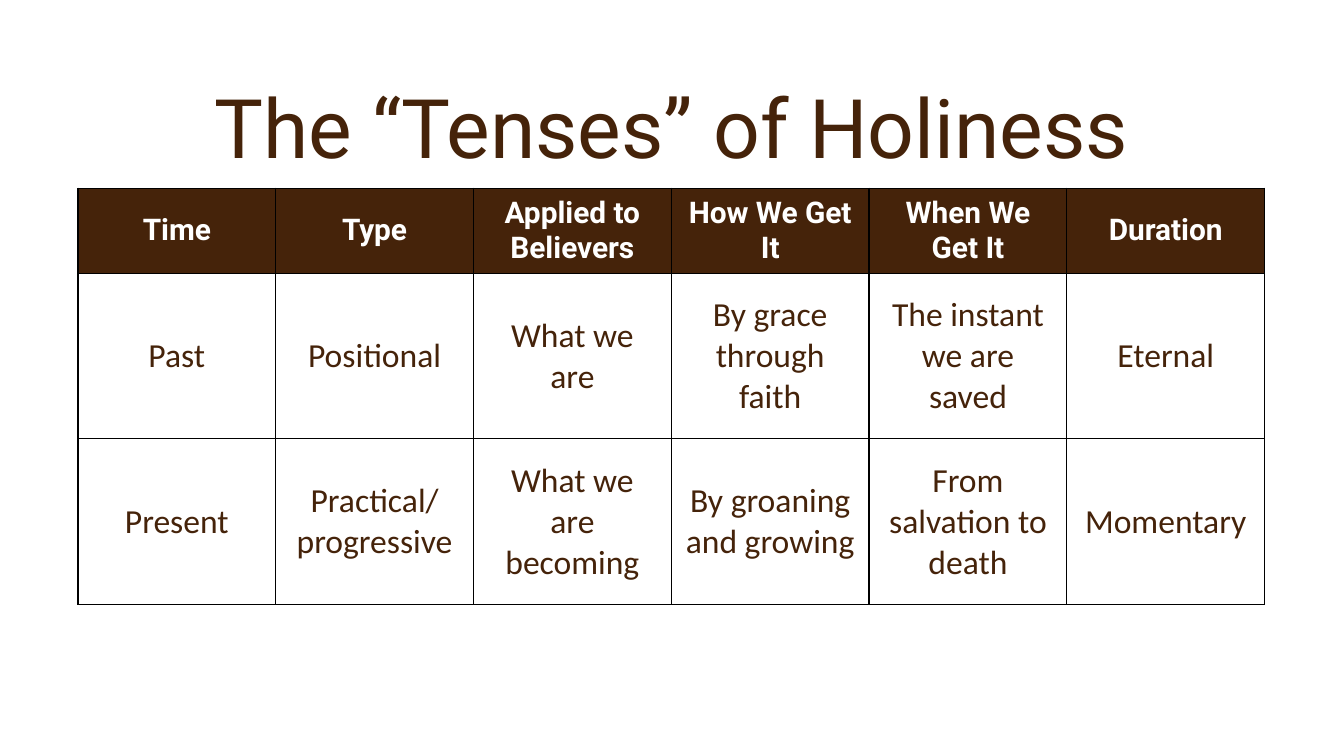
import lxml.etree
import pptx
import pptx.dml.color
import pptx.enum.text
import pptx.oxml.ns
import pptx.util

BROWN = pptx.dml.color.RGBColor(0x45, 0x23, 0x0A)
WHITE = pptx.dml.color.RGBColor(0xFF, 0xFF, 0xFF)
BLACK = pptx.dml.color.RGBColor(0x00, 0x00, 0x00)

HEADS = ["Time", "Type", "Applied to Believers", "How We Get It", "When We Get It", "Duration"]
TENSES = [
    ["Past", "Positional", "What we are", "By grace through faith",
     "The instant we are saved", "Eternal"],
    ["Present", "Practical/progressive", "What we are becoming",
     "By groaning and growing", "From salvation to death", "Momentary"],
]


def write(frame, text, size=18, font="Calibri", color=BROWN, bold=False, space=None):
    para = frame.paragraphs[0]
    para.alignment = pptx.enum.text.PP_ALIGN.CENTER
    para.line_spacing = space
    run = para.add_run()
    run.text = text
    run.font.size = pptx.util.Pt(size)
    run.font.name = font
    run.font.bold = bold
    run.font.color.rgb = color


def edge(cell, width=0.75, color=BLACK):
    props = cell._tc.get_or_add_tcPr()
    for side in ("lnL", "lnR", "lnT", "lnB"):
        line = lxml.etree.SubElement(
            props, pptx.oxml.ns.qn(f"a:{side}"), w=str(pptx.util.Pt(width)))
        fill = lxml.etree.SubElement(line, pptx.oxml.ns.qn("a:solidFill"))
        lxml.etree.SubElement(fill, pptx.oxml.ns.qn("a:srgbClr"), val=str(color))


class Deck:
    """Hold the style and the current 16:9 slide, with lengths in inches."""

    def __init__(self, wide):
        self.file = pptx.Presentation()
        self.file.slide_width = pptx.util.Inches(wide)
        self.file.slide_height = pptx.util.Inches(wide * 9 / 16)
        self.slide = self.file.slides.add_slide(self.file.slide_layouts[6])
        self.middle = pptx.enum.text.MSO_ANCHOR.MIDDLE

    def title(self, text, *place):
        box = self.slide.shapes.add_textbox(*map(pptx.util.Inches, place))
        frame = box.text_frame
        frame.word_wrap = True
        frame.vertical_anchor = self.middle
        write(frame, text, size=44, font="Roboto", space=0.9)

    def table(self, heads, body, left, top, wide, high):
        rows = [heads, *body]
        spans = [1] + [2] * len(body)
        place = map(pptx.util.Inches, (left, top, wide, high))
        grid = self.slide.shapes.add_table(len(rows), len(heads), *place).table
        grid.horz_banding = False
        for part, span in zip(grid.rows, spans):
            part.height = pptx.util.Inches(high * span / sum(spans))
        for r, words in enumerate(rows):
            for c, text in enumerate(words):
                self.cell(grid.cell(r, c), text, head=r == 0)

    def cell(self, cell, text, head):
        edge(cell)
        cell.vertical_anchor = self.middle
        if head:
            cell.fill.solid()
            cell.fill.fore_color.rgb = BROWN
            write(cell.text_frame, text, size=16, font="Roboto", color=WHITE, bold=True)
        else:
            cell.fill.background()
            write(cell.text_frame, text)

    def save(self):
        self.file.save("out.pptx")


def main():
    deck = Deck(10)
    deck.title("The “Tenses” of Holiness", 0.5, 0.4, 9, 1.17)
    deck.table(HEADS, TENSES, left=0.58, top=1.4, wide=8.83, high=3.08)
    deck.save()


if __name__ == "__main__":
    main()
